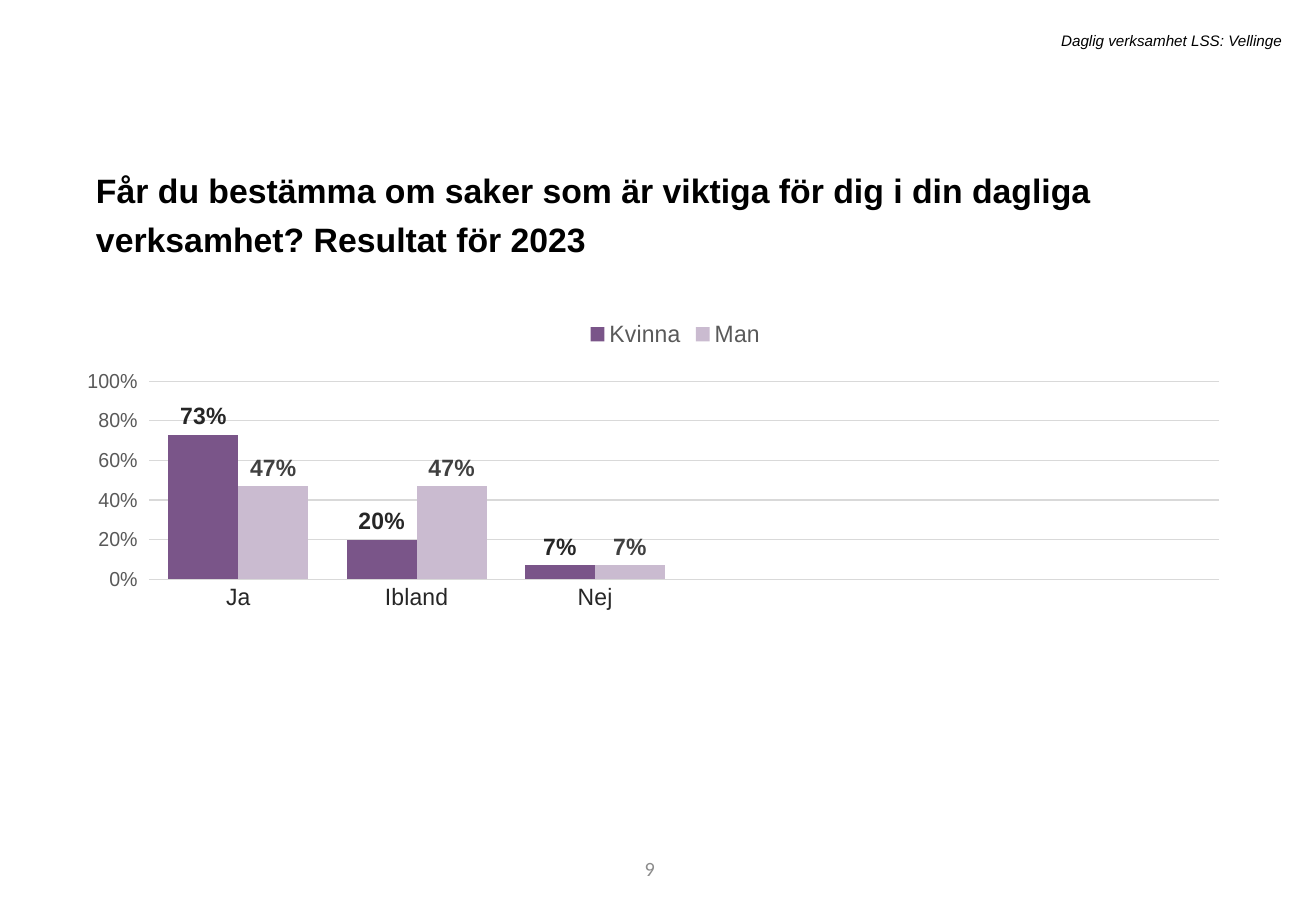
import pptx
import pptx.chart.data
import pptx.dml.color
import pptx.enum.chart
import pptx.enum.text
import pptx.util

Pt = pptx.util.Pt
Align = pptx.enum.text.PP_ALIGN
Anchor = pptx.enum.text.MSO_ANCHOR

COLORS = {
    "black": "000000",
    "page": "8C8C8C",
    "grid": "D9D9D9",
    "axis": "595959",
    "category": "262626",
    "kvinna": "7A5589",
    "man": "CABBD0",
    "kvinna_label": "262626",
    "man_label": "404040",
}


def set_font(font, size, color, name="Arial", bold=False, italic=False):
    font.name = name
    font.size = Pt(size)
    font.bold = bold
    font.italic = italic
    font.color.rgb = pptx.dml.color.RGBColor.from_string(COLORS[color])


def fill_text(shape, box, text, alignment, anchor, **font):
    shape.left, shape.top, shape.width, shape.height = [Pt(value) for value in box]
    frame = shape.text_frame
    frame.word_wrap = True
    frame.auto_size = pptx.enum.text.MSO_AUTO_SIZE.NONE
    frame.vertical_anchor = anchor
    paragraph = frame.paragraphs[0]
    paragraph.alignment = alignment
    run = paragraph.add_run()
    run.text = text
    set_font(run.font, **font)
    return paragraph


presentation = pptx.Presentation()
presentation.slide_width = Pt(780)
presentation.slide_height = Pt(540)
slide = presentation.slides.add_slide(presentation.slide_layouts[5])

# Title
title = fill_text(
    slide.shapes.title, (49.7, 92.2, 676.8, 66),
    "Får du bestämma om saker som är viktiga för dig i din dagliga verksamhet? Resultat för 2023",
    Align.LEFT, Anchor.TOP, size=20, color="black", bold=True)
title.line_spacing = 1.2
title.space_before = Pt(10)

# Header and page number
header = slide.shapes.add_textbox(0, 0, 0, 0)
fill_text(header, (128.9, 15.1, 637.9, 18), "Daglig verksamhet LSS: Vellinge",
          Align.RIGHT, Anchor.TOP, size=9, color="black", italic=True)
page_number = slide.shapes.add_textbox(0, 0, 0, 0)
fill_text(page_number, (219.6, 500.4, 175.7, 28.8), "9",
          Align.RIGHT, Anchor.MIDDLE, size=12, color="page", name="Calibri")

# Chart data, with three empty categories on the right
chart_data = pptx.chart.data.CategoryChartData(number_format="0%")
chart_data.categories = ["Ja", "Ibland", "Nej", "", "", ""]
chart_data.add_series("Kvinna", [0.73, 0.2, 0.07, None, None, None])
chart_data.add_series("Man", [0.47, 0.47, 0.07, None, None, None])
chart = slide.shapes.add_chart(
    pptx.enum.chart.XL_CHART_TYPE.COLUMN_CLUSTERED,
    Pt(51.8), Pt(182.2), Pt(676.8), Pt(284.4), chart_data).chart
set_font(chart.font, 10, "black")
chart.has_title = False

# Legend
chart.has_legend = True
chart.legend.position = pptx.enum.chart.XL_LEGEND_POSITION.TOP
chart.legend.include_in_layout = False
set_font(chart.legend.font, 14, "axis")

# Columns and labels
plot = chart.plots[0]
plot.gap_width = 55
plot.overlap = 0
plot.vary_by_categories = False
for series, color in zip(plot.series, ("kvinna", "man")):
    series.format.fill.solid()
    series.format.fill.fore_color.rgb = pptx.dml.color.RGBColor.from_string(COLORS[color])
    labels = series.data_labels
    labels.show_value = True
    labels.number_format = "0%"
    labels.number_format_is_linked = False
    labels.position = pptx.enum.chart.XL_LABEL_POSITION.OUTSIDE_END
    set_font(labels.font, 14, color + "_label", bold=True)

# Axes
category_axis = chart.category_axis
category_axis.major_tick_mark = pptx.enum.chart.XL_TICK_MARK.NONE
set_font(category_axis.tick_labels.font, 14, "category")
value_axis = chart.value_axis
value_axis.minimum_scale = 0
value_axis.maximum_scale = 1
value_axis.major_unit = 0.2
value_axis.has_major_gridlines = True
value_axis.format.line.fill.background()
value_axis.tick_labels.number_format = "0%"
value_axis.tick_labels.number_format_is_linked = False
set_font(value_axis.tick_labels.font, 12, "axis")
for line in (category_axis.format.line, value_axis.major_gridlines.format.line):
    line.width = Pt(0.75)
    line.color.rgb = pptx.dml.color.RGBColor.from_string(COLORS["grid"])

# Fixed plot area, as fractions of the chart
plot_area = chart._chartSpace.chart.plotArea
namespace = "http://schemas.openxmlformats.org/drawingml/2006/chart"
for layout in plot_area.findall(f"{{{namespace}}}layout"):
    plot_area.remove(layout)
plot_area.insert(0, pptx.oxml.parse_xml(
    f'<c:layout xmlns:c="{namespace}"><c:manualLayout>'
    '<c:layoutTarget val="inner"/><c:xMode val="edge"/><c:yMode val="edge"/>'
    '<c:x val="0.025"/><c:y val="0.154"/><c:w val="0.966"/><c:h val="0.413"/>'
    '</c:manualLayout></c:layout>'))

presentation.save("out.pptx")
